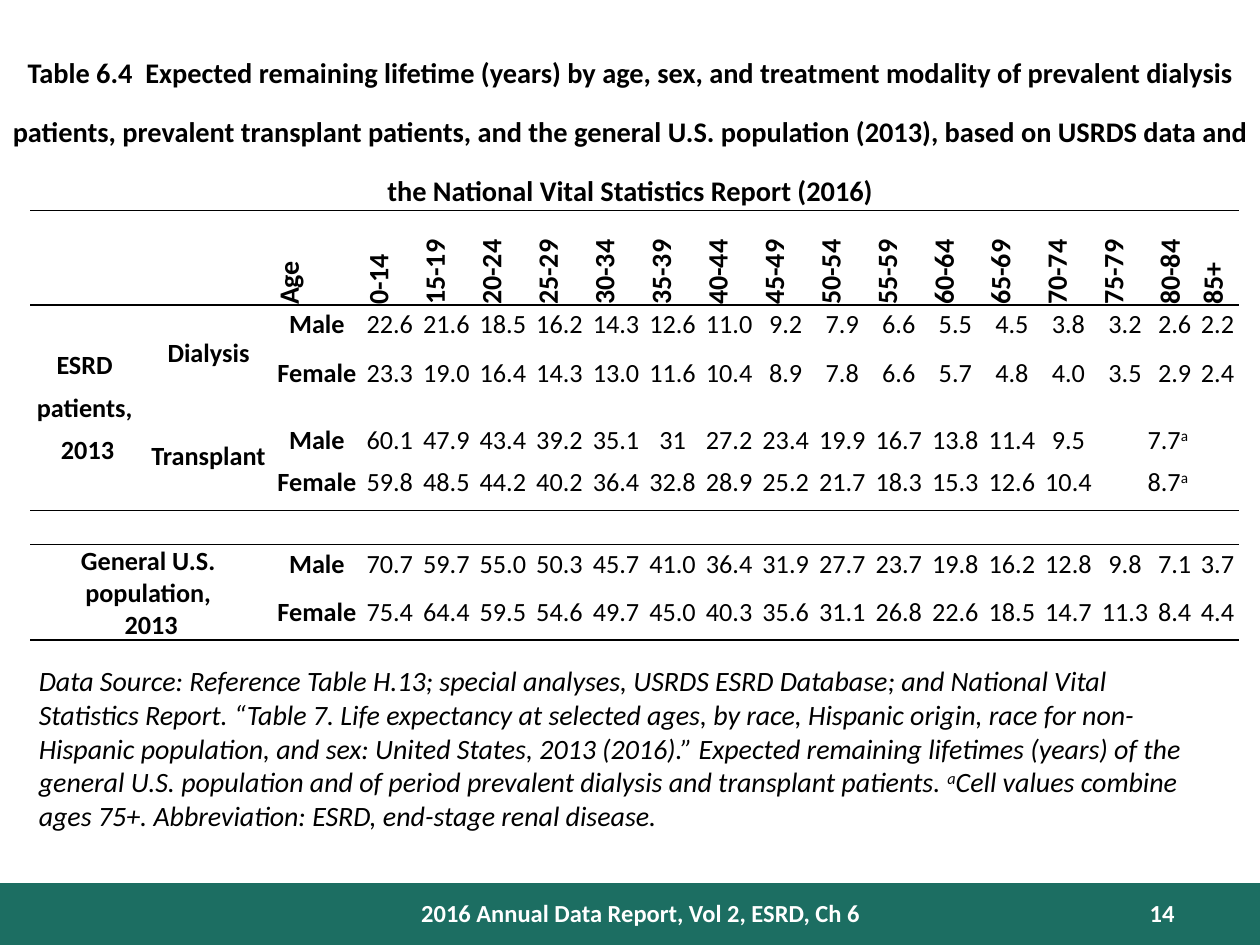
"""Build the slide with the table of expected remaining lifetimes."""
from dataclasses import dataclass

from lxml import etree
from pptx import Presentation
from pptx.dml.color import RGBColor
from pptx.enum.shapes import MSO_SHAPE
from pptx.enum.text import MSO_ANCHOR, PP_ALIGN
from pptx.oxml.ns import qn
from pptx.util import Inches, Pt

LEFT, CENTER, RIGHT = PP_ALIGN.LEFT, PP_ALIGN.CENTER, PP_ALIGN.RIGHT
MIDDLE = MSO_ANCHOR.MIDDLE
RECTANGLE = MSO_SHAPE.RECTANGLE
PLAIN_TABLE = "{2D5ABB26-0587-4C30-8999-92F81FD0307C}"
GRID_COLUMNS, GRID_ROWS = 100, 75

TITLE = (
    "Table 6.4  Expected remaining lifetime (years) by age, sex, and treatment modality of "
    "prevalent dialysis patients, prevalent transplant patients, and the general U.S. "
    "population (2013), based on USRDS data and the National Vital Statistics Report (2016)"
)
SOURCE_NOTE = (
    "Data Source: Reference Table H.13; special analyses, USRDS ESRD Database; and National "
    "Vital Statistics Report. “Table 7. Life expectancy at selected ages, by race, Hispanic "
    "origin, race for non-Hispanic population, and sex: United States, 2013 (2016).” Expected "
    "remaining lifetimes (years) of the general U.S. population and of period prevalent "
    "dialysis and transplant patients. ^a^Cell values combine ages 75+. Abbreviation: ESRD, "
    "end-stage renal disease."
)
AGES = ("Age 0-14 15-19 20-24 25-29 30-34 35-39 40-44 45-49 50-54 "
        "55-59 60-64 65-69 70-74 75-79 80-84 85+")
LIFETIMES = {
    1: "Male 22.6 21.6 18.5 16.2 14.3 12.6 11.0 9.2 7.9 6.6 5.5 4.5 3.8 3.2 2.6 2.2",
    2: "Female 23.3 19.0 16.4 14.3 13.0 11.6 10.4 8.9 7.8 6.6 5.7 4.8 4.0 3.5 2.9 2.4",
    3: "Male 60.1 47.9 43.4 39.2 35.1 31 27.2 23.4 19.9 16.7 13.8 11.4 9.5 7.7^a",
    4: "Female 59.8 48.5 44.2 40.2 36.4 32.8 28.9 25.2 21.7 18.3 15.3 12.6 10.4 8.7^a",
    6: "Male 70.7 59.7 55.0 50.3 45.7 41.0 36.4 31.9 27.7 23.7 19.8 16.2 12.8 9.8 7.1 3.7",
    7: "Female 75.4 64.4 59.5 54.6 49.7 45.0 40.3 35.6 31.1 26.8 22.6 18.5 14.7 11.3 8.4 4.4",
}
GROUPS = {
    (1, 0): ["ESRD ", "patients, ", "2013"],
    (1, 1): ["Dialysis"],
    (3, 1): ["Transplant"],
    (6, 0): ["General U.S. ", "population, \n2013"],
}
MERGES = [(0, 0, 0, 1), (1, 0, 4, 0), (1, 1, 2, 1), (3, 1, 4, 1), (3, 16, 3, 18),
          (4, 16, 4, 18), (5, 0, 5, 2), (6, 0, 7, 1)]
RULES = {0: "TB", 4: "B", 5: "TB", 7: "B"}
PADDED = {(1, 1), (3, 1)} | {(row, column) for row in (2, 4) for column in range(2, 19)}
COLUMN_WIDTHS = [9.1, 10.1, 7.1] + [4.49] * 14 + [3.4] * 2
ROW_HEIGHTS = [7.5, 3.1, 5.6, 4, 3.6, 2.7, 3.1, 4.5]


@dataclass(frozen=True)
class Theme:
    """Colours, font and type sizes of the slide."""
    font: str = "Calibri"
    ink: str = "000000"
    paper: str = "FFFFFF"
    band: str = "1C6E62"
    title: int = 28
    note: int = 16
    ages: int = 16
    body: int = 15
    footer: int = 14
    empty: int = 10
    gap: int = 6
    rule: int = 1


class Page:
    """The current slide, its grid and its style."""

    def __init__(self, deck, theme):
        self.theme = theme
        self.slide = deck.slides.add_slide(deck.slide_layouts[6])
        self.unit_x = deck.slide_width / GRID_COLUMNS
        self.unit_y = deck.slide_height / GRID_ROWS

    def place(self, left, top, width, height):
        """Turn grid columns and rows into lengths."""
        return (round(left * self.unit_x), round(top * self.unit_y),
                round(width * self.unit_x), round(height * self.unit_y))

    def band(self, *area):
        """Draw a plain filled band."""
        band = self.slide.shapes.add_shape(RECTANGLE, *self.place(*area))
        band.shadow.inherit = False
        band.fill.solid()
        band.fill.fore_color.rgb = RGBColor.from_string(self.theme.band)
        band.line.fill.background()

    def add_runs(self, paragraph, text, size, color, align, bold=False, italic=False,
                 raised=False):
        """Add runs to a paragraph; a caret switches superscript on and off."""
        paragraph.alignment = align
        for line_number, line in enumerate(text.split("\n")):
            if line_number:
                paragraph.add_line_break()
            for part_number, part in enumerate(line.split("^")):
                run = paragraph.add_run()
                run.text = part
                run.font.name, run.font.size = self.theme.font, Pt(size)
                run.font.bold, run.font.italic = bold, italic
                run.font.color.rgb = RGBColor.from_string(color)
                if raised or part_number % 2:
                    run.font._element.set("baseline", "30000")

    def text(self, area, text, size, color, align, **style):
        """Add a wrapped text box with one paragraph."""
        frame = self.slide.shapes.add_textbox(*self.place(*area)).text_frame
        frame.word_wrap = True
        self.add_runs(frame.paragraphs[0], text, size, color, align, **style)

    def table(self, left, top, widths, heights):
        """Add an unstyled table with the given merges."""
        area = self.place(left, top, sum(widths), sum(heights))
        table = self.slide.shapes.add_table(len(heights), len(widths), *area).table
        table.first_row = table.horz_banding = False
        table._tbl.tblPr.find(qn("a:tableStyleId")).text = PLAIN_TABLE
        for column, width in zip(table.columns, widths):
            column.width = round(width * self.unit_x)
        for row, height in zip(table.rows, heights):
            row.height = round(height * self.unit_y)
        for first_row, first_column, last_row, last_column in MERGES:
            table.cell(first_row, first_column).merge(table.cell(last_row, last_column))
        return table

    def rule(self, cell, edge):
        """Draw one border of a cell."""
        line = etree.SubElement(cell._tc.get_or_add_tcPr(), qn(f"a:ln{edge}"),
                                w=str(Pt(self.theme.rule)))
        fill = etree.SubElement(line, qn("a:solidFill"))
        etree.SubElement(fill, qn("a:srgbClr"), val=self.theme.ink)

    def cell(self, table, row, column, paragraphs):
        """Fill, rule and letter one table cell."""
        cell = table.cell(row, column)
        last_row = row + cell.span_height - 1
        if "T" in RULES.get(row, ""):
            self.rule(cell, "T")
        if "B" in RULES.get(last_row, ""):
            self.rule(cell, "B")
        cell.fill.background()
        cell.vertical_anchor = MIDDLE
        is_age = row == 0
        side = Inches(0 if is_age else 0.01)
        cell.margin_left = cell.margin_top = cell.margin_right = side
        cell.margin_bottom = Inches(0.1 if is_age or (row, column) in PADDED else 0)
        if not paragraphs:
            etree.SubElement(cell.text_frame.paragraphs[0]._p, qn("a:endParaRPr"),
                             sz=str(self.theme.empty * 100))
            return
        if is_age:
            cell._tc.get_or_add_tcPr().set("vert", "vert270")
        size, align = (self.theme.ages, LEFT) if is_age else (self.theme.body, CENTER)
        for number, text in enumerate(paragraphs):
            frame = cell.text_frame
            paragraph = frame.add_paragraph() if number else frame.paragraphs[0]
            if number and (row, column) == (1, 0):
                paragraph.space_before = Pt(self.theme.gap)
            self.add_runs(paragraph, text, size, self.theme.ink, align,
                          bold=is_age or column < 3)


def main():
    """Build and save the slide."""
    deck = Presentation()
    deck.slide_width, deck.slide_height = Inches(10), Inches(7.5)
    theme = Theme()
    page = Page(deck, theme)

    page.band(0, 70.1, 100, 4.9)
    page.text((0, 3.4, 100, 10.4), TITLE, theme.title, theme.ink, CENTER, bold=True, raised=True)
    page.text((31.7, 70.8, 38.3, 3.3), "2016 Annual Data Report, Vol 2, ESRD, Ch 6",
              theme.footer, theme.paper, CENTER, bold=True)
    page.text((84.2, 70.8, 10, 3), "14", theme.footer, theme.paper, RIGHT, bold=True)
    page.text((2.1, 52.2, 95.1, 14.5), SOURCE_NOTE, theme.note, theme.ink, LEFT, italic=True)

    entries = dict(GROUPS)
    for row, values in {0: AGES, **LIFETIMES}.items():
        for column, value in enumerate(values.split(), start=2):
            entries[row, column] = [value]
    lifetimes = page.table(2.4, 16.7, COLUMN_WIDTHS, ROW_HEIGHTS)
    for row in range(len(ROW_HEIGHTS)):
        for column in range(len(COLUMN_WIDTHS)):
            page.cell(lifetimes, row, column, entries.get((row, column)))

    deck.save("out.pptx")


if __name__ == "__main__":
    main()
